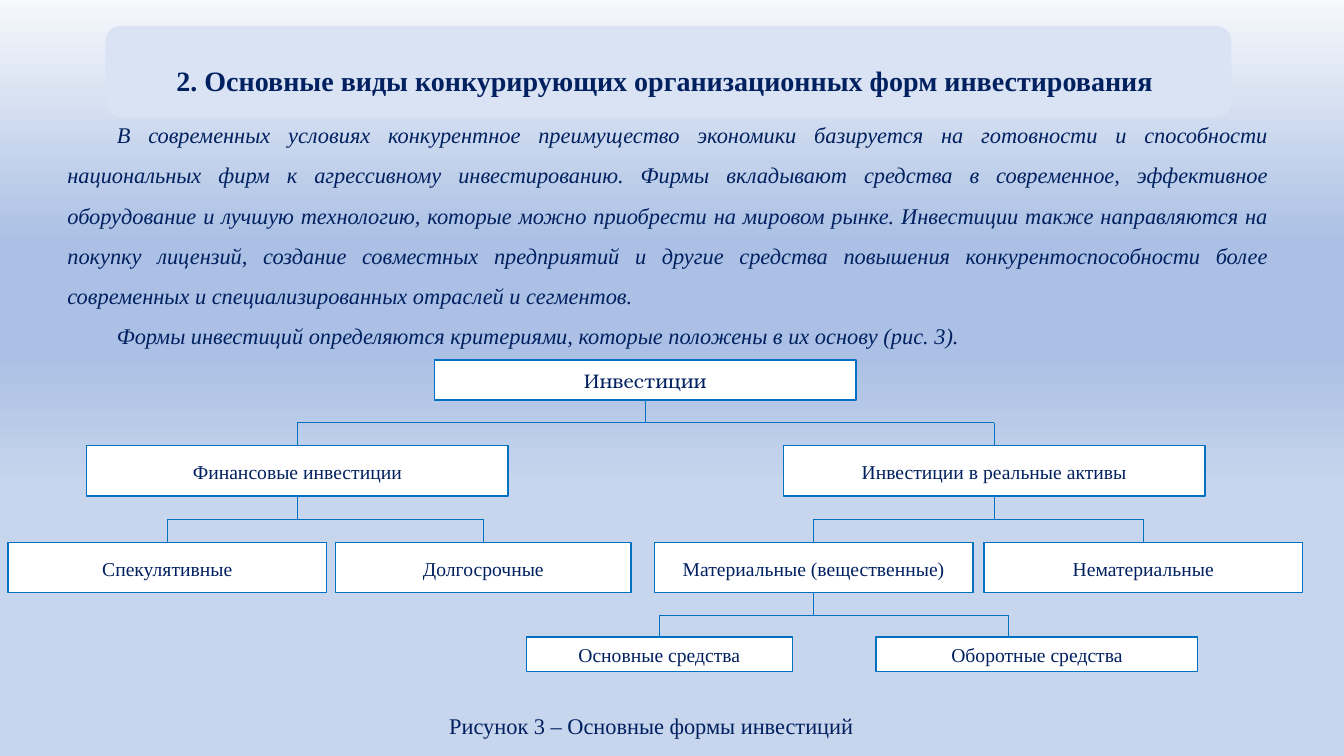
"""Build a slide on the main forms of investment, with a tree of boxes."""
import pptx
import pptx.util
import pptx.dml.color
import pptx.enum.shapes
import pptx.enum.text
import pptx.oxml.ns
import pptx.oxml.xmlchemy

Inches, Pt = pptx.util.Inches, pptx.util.Pt
Kind = pptx.enum.shapes.MSO_SHAPE
Align = pptx.enum.text.PP_ALIGN
Anchor = pptx.enum.text.MSO_ANCHOR
Fit = pptx.enum.text.MSO_AUTO_SIZE
qn = pptx.oxml.ns.qn
make = pptx.oxml.xmlchemy.OxmlElement

COLORS = {"ink": "002060", "edge": "0070C0", "box": "FFFFFF", "band": "DAE3F3"}
STOPS = [(0, "F6F8FC"), (32, "ABC0E4"), (47, "ABC0E4"), (64, "C7D5ED")]
SERIF = "Times New Roman"
TITLE = "2. Основные виды конкурирующих организационных форм инвестирования "
BODY = [
    "В современных условиях конкурентное преимущество экономики базируется на "
    "готовности и способности национальных фирм к агрессивному инвестированию. "
    "Фирмы вкладывают средства в современное, эффективное оборудование и лучшую "
    "технологию, которые можно приобрести на мировом рынке. Инвестиции также "
    "направляются на покупку лицензий, создание совместных предприятий и другие "
    "средства повышения конкурентоспособности более современных и "
    "специализированных отраслей и сегментов.",
    "Формы инвестиций определяются критериями, которые положены в их основу (рис. 3).",
]
CAPTION = "Рисунок 3 – Основные формы инвестиций"

ROWS = [(3.57, 0.4), (4.42, 0.5), (5.38, 0.5), (6.32, 0.34)]
NODES = {
    "all": ("Инвестиции", 0, 4.31, 4.18),
    "money": ("Финансовые инвестиции", 1, 0.86, 4.18),
    "real": ("Инвестиции в реальные активы", 1, 7.77, 4.18),
    "quick": ("Спекулятивные", 2, 0.08, 3.16),
    "long": ("Долгосрочные", 2, 3.33, 2.93),
    "solid": ("Материальные (вещественные)", 2, 6.49, 3.16),
    "other": ("Нематериальные", 2, 9.76, 3.16),
    "fixed": ("Основные средства", 3, 5.22, 2.64),
    "float": ("Оборотные средства", 3, 8.69, 3.19),
}
TREE = {
    "all": ("money", "real"),
    "money": ("quick", "long"),
    "real": ("solid", "other"),
    "solid": ("fixed", "float"),
}
JOINTS = {"float": 10}

HEAD = {"font": {"size": Pt(20), "name": SERIF, "bold": True},
        "para": {"alignment": Align.CENTER, "line_spacing": 1.5}}
PROSE = {"font": {"size": Pt(16), "name": SERIF, "italic": True},
         "para": {"alignment": Align.JUSTIFY, "line_spacing": 1.5}}
LABEL = {"font": {"size": Pt(14), "name": SERIF},
         "para": {"alignment": Align.CENTER, "line_spacing": 1.07, "space_after": Pt(8)}}
ROOT = {"font": {"size": Pt(14), "name": "TeX Gyre Bonum"}, "para": LABEL["para"]}
NOTE = {"font": {"size": Pt(16), "name": SERIF},
        "para": {"alignment": Align.CENTER, "line_spacing": 1.5}}


def rgb(name):
    return pptx.dml.color.RGBColor.from_string(COLORS[name])


def apply(item, values):
    for key, value in values.items():
        setattr(item, key, value)


def write(shape, texts, style, frame):
    apply(shape.text_frame, {"word_wrap": True, **frame})
    for num, text in enumerate(texts):
        body = shape.text_frame
        para = body.add_paragraph() if num else body.paragraphs[0]
        apply(para, style["para"])
        run = para.add_run()
        run.text = text
        apply(run.font, style["font"])
        run.font.color.rgb = rgb("ink")


def panel(shapes, kind, place, fill, edge, width):
    shape = shapes.add_shape(kind, *map(Inches, place))
    shape.shadow.inherit = False
    shape.fill.solid()
    shape.fill.fore_color.rgb = rgb(fill)
    shape.line.color.rgb = rgb(edge)
    shape.line.width = Pt(width)
    return shape


def link(shapes, start, end):
    line = shapes.add_connector(pptx.enum.shapes.MSO_CONNECTOR.STRAIGHT,
                                *map(Inches, start + end))
    line.line.color.rgb = rgb("edge")
    line.line.width = Pt(0.5)
    line.element.spPr.append(make("a:effectLst"))
    return line


def paint(slide):
    fill = slide.background.fill
    fill.gradient()
    fill.gradient_angle = 270
    stops = next(slide.element.iter(qn("a:gsLst")))
    for old in list(stops):
        stops.remove(old)
    for spot, tone in STOPS:
        stop = make("a:gs")
        stop.set("pos", str(spot * 1000))
        color = make("a:srgbClr")
        color.set("val", tone)
        stop.append(color)
        stops.append(stop)


def draw_tree(shapes):
    boxes, mids = {}, {}
    for key, (text, row, left, width) in NODES.items():
        top, height = ROWS[row]
        box = panel(shapes, Kind.RECTANGLE, (left, top, width, height), "box", "edge", 1)
        frame = {"vertical_anchor": Anchor.MIDDLE}
        if row == 3:
            frame.update(margin_left=Inches(0.02), margin_right=Inches(0.02))
        write(box, [text], LABEL if row else ROOT, frame)
        boxes[key], mids[key] = box, left + width / 2
    mids.update(JOINTS)
    for key, kids in TREE.items():
        row = NODES[key][1]
        top, height = ROWS[row]
        base, below = top + height, ROWS[row + 1][0]
        bus = (base + below) / 2
        stem = link(shapes, (mids[key], base), (mids[key], bus))
        stem.begin_connect(boxes[key], 2)
        link(shapes, (mids[kids[0]], bus), (mids[kids[-1]], bus))
        for kid in kids:
            drop = link(shapes, (mids[kid], bus), (mids[kid], below))
            if kid not in JOINTS:
                drop.end_connect(boxes[kid], 0)


def main():
    deck = pptx.Presentation()
    apply(deck, {"slide_width": Inches(13.33), "slide_height": Inches(7.5)})
    slide = deck.slides.add_slide(deck.slide_layouts[6])
    shapes = slide.shapes
    paint(slide)
    band = panel(shapes, Kind.ROUNDED_RECTANGLE, (1.05, 0.26, 11.16, 0.9),
                 "band", "band", 0.5)
    write(band, [TITLE], HEAD, {"vertical_anchor": Anchor.MIDDLE})
    grow = {"auto_size": Fit.SHAPE_TO_FIT_TEXT}
    prose = shapes.add_textbox(*map(Inches, (0.57, 1.02, 12.11, 2.48)))
    write(prose, BODY, PROSE, grow)
    for para in prose.text_frame.paragraphs:
        para._p.get_or_add_pPr().set("indent", str(Inches(0.49)))
    draw_tree(shapes)
    note = shapes.add_textbox(*map(Inches, (3.83, 6.88, 5.26, 0.46)))
    write(note, [CAPTION], NOTE, grow)
    deck.save("out.pptx")


if __name__ == "__main__":
    main()
